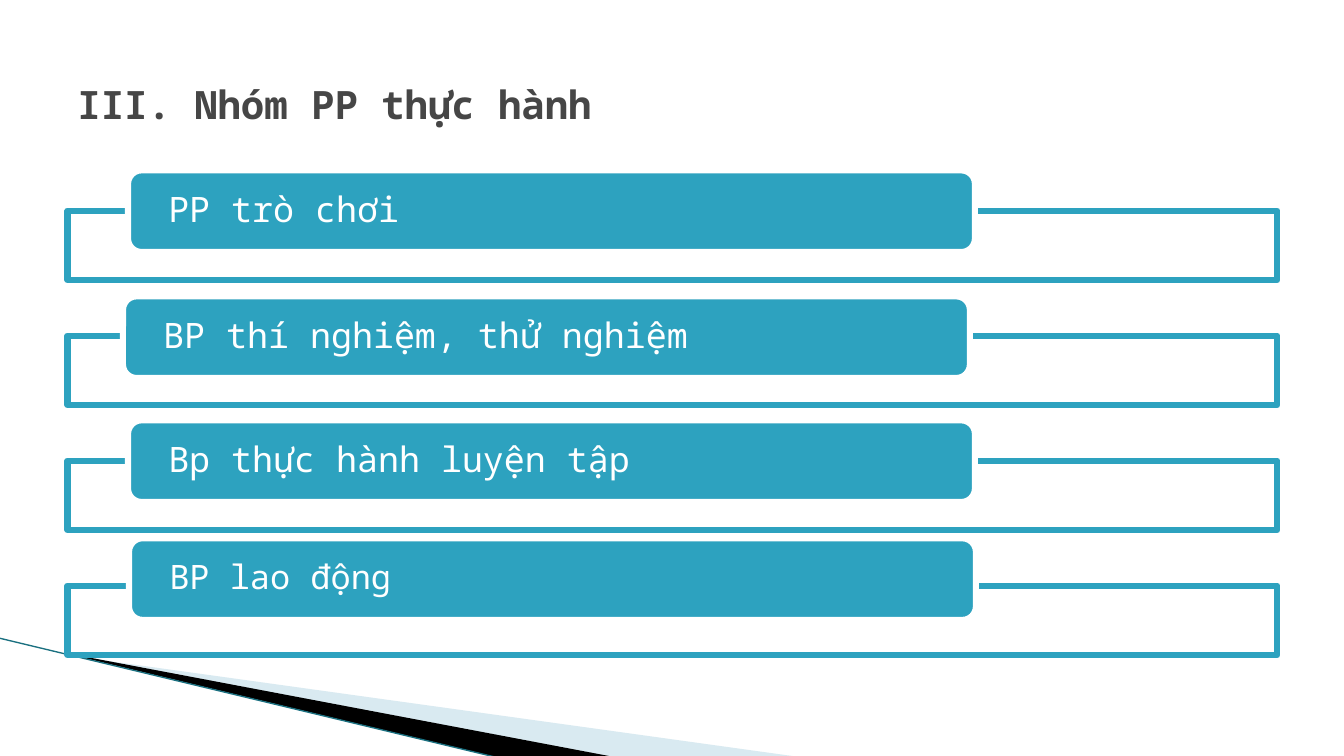
"""Build the slide listing the practice method group."""
from lxml.etree import SubElement as Sub
from pptx import Presentation
from pptx.dml.color import RGBColor
from pptx.enum.shapes import MSO_CONNECTOR as Conn, MSO_SHAPE as Form
from pptx.enum.text import MSO_ANCHOR as Anchor, PP_ALIGN as Align
from pptx.oxml.ns import qn
from pptx.util import Inches, Pt


def paint(part, tint, alpha=100):
    part.solid()
    part.fore_color.rgb = RGBColor.from_string(tint)
    if alpha < 100:
        node = part._xPr.find(qn("a:solidFill"))[0]
        Sub(node, qn("a:alpha")).set("val", str(alpha * 1000))


def write(shape, text, size, tint, bold, look, form):
    frame = shape.text_frame
    for key, val in look.items():
        setattr(frame, key, val)
    para = frame.paragraphs[0]
    for key, val in form.items():
        setattr(para, key, val)
    run = para.add_run()
    run.text = text
    for key, val in dict(name="Noto Sans Mono", size=Pt(size), bold=bold).items():
        setattr(run.font, key, val)
    paint(run.font.fill, tint)


deck = Presentation()
deck.slide_width, deck.slide_height = Inches(13.33), Inches(7.5)
slide = deck.slides.add_slide(deck.slide_layouts[6])
shapes = slide.shapes
paint(slide.background.fill, "FFFFFF")

wedges = [
    ("A0CBDC", 40, [(0.73, 6.51), (7.93, 7.51), (6.08, 7.51), (0.73, 6.5)]),
    ("000000", 100, [(0.71, 6.49), (6.09, 7.51), (4.96, 7.52), (0.72, 6.5)]),
]
for tint, alpha, spots in wedges:
    spots = [(Inches(x), Inches(y)) for x, y in spots]
    pen = shapes.build_freeform(*spots[0], scale=1)
    pen.add_line_segments(spots[1:], close=True)
    wedge = pen.convert_to_shape()
    wedge.shadow.inherit = False
    paint(wedge.fill, tint, alpha)
    wedge.line.fill.background()

edge = shapes.add_connector(
    Conn.STRAIGHT, Inches(-0.01), Inches(6.33), Inches(4.95), Inches(7.52))
paint(edge.line.fill, "1A7080")
edge.line.width = Pt(0.95)
Sub(edge._element.spPr, qn("a:effectLst"))

inset = Inches(0.36)
look = dict(word_wrap=True, vertical_anchor=Anchor.MIDDLE,
            margin_left=inset, margin_right=inset, margin_top=0, margin_bottom=0)
rows = [
    ("PP trò chơi", 1.27, 1.69, 25),
    ("BP thí nghiệm, thử nghiệm", 1.22, 2.94, 25),
    ("Bp thực hành luyện tập", 1.27, 4.17, 25),
    ("BP lao động", 1.28, 5.34, 24),
]
for i, (text, left, top, size) in enumerate(rows):
    frame = shapes.add_shape(
        Form.RECTANGLE, Inches(0.67), Inches(2.09 + 1.24 * i), Inches(12), Inches(0.69))
    label = shapes.add_shape(
        Form.ROUNDED_RECTANGLE, Inches(left), Inches(top), Inches(8.4), Inches(0.81))
    for box, fill, alpha, line in [(frame, "FFFFFF", 90, "2DA2BF"),
                                   (label, "2DA2BF", 100, "FFFFFF")]:
        box.shadow.inherit = False
        paint(box.fill, fill, alpha)
        paint(box.line.fill, line)
        box.line.width = Pt(4.33)
    write(label, text, size, "FFFFFF", False, look,
          dict(alignment=Align.LEFT, line_spacing=0.9))

title = shapes.add_textbox(Inches(0.67), Inches(0.3), Inches(12), Inches(0.94))
write(title, "III. Nhóm PP thực hành", 27.9, "464646", True,
      dict(word_wrap=True, vertical_anchor=Anchor.MIDDLE,
           margin_top=Inches(0.53), margin_bottom=0),
      dict(alignment=Align.JUSTIFY))

deck.save("out.pptx")
